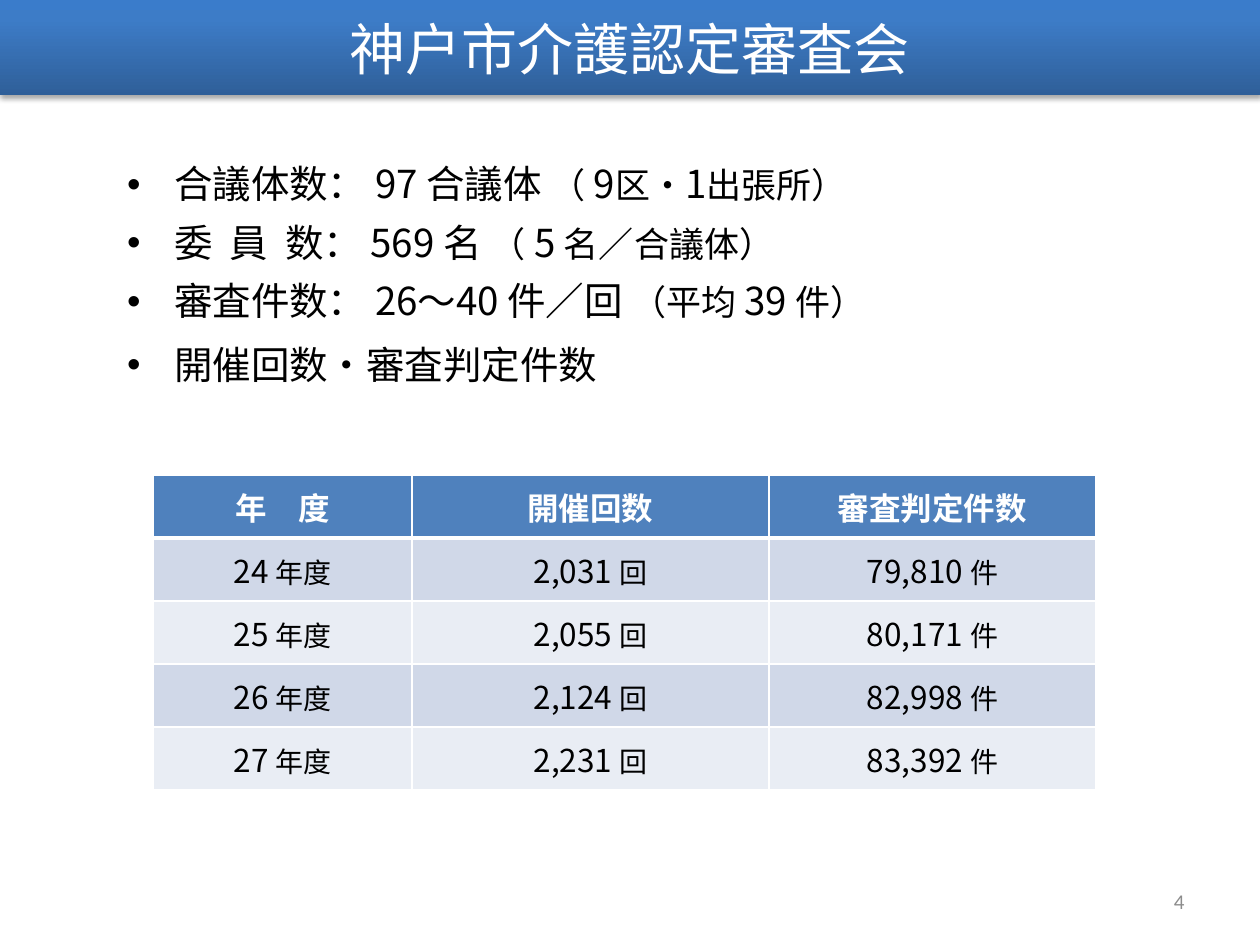
from dataclasses import dataclass

from pptx import Presentation
from pptx.dml.color import RGBColor
from pptx.enum.shapes import MSO_SHAPE
from pptx.enum.text import MSO_ANCHOR, PP_ALIGN
from pptx.oxml import parse_xml
from pptx.oxml.ns import nsdecls, qn
from pptx.util import Pt


@dataclass(frozen=True)
class Theme:
    black: str = "000000"
    white: str = "FFFFFF"
    grey: str = "8C8C8C"
    header: str = "4F81BD"
    bands: tuple = ("D0D8E8", "E9EDF4")
    banner_stops: tuple = ((0, "2F5F99"), (80, "3D7CC7"), (100, "3A7CCB"))
    japanese: str = "Noto Sans CJK JP"
    latin: str = "Calibri"
    title: int = 32
    body: int = 22
    aside: int = 20
    cell: int = 18
    unit: int = 16
    number: int = 12


THEME = Theme()

# Each bullet is a list of (text, size, letter spacing in points)
BULLETS = [
    [("合議体数： 97 合議体 ", THEME.body, 0), ("（", THEME.aside, 0),
     (" 9", THEME.body, 0), ("区・", THEME.aside, 0),
     ("1", THEME.body, 0), ("出張所）", THEME.aside, 0)],
    [("委 員 ", THEME.body, 2.4), ("数： 569 名 ", THEME.body, 0),
     ("（", THEME.aside, 0), (" 5 ", THEME.body, 0),
     ("名／合議体）", THEME.aside, 0)],
    [("審査件数： 26～40 件／回 ", THEME.body, 0), ("（平均 ", THEME.aside, 0),
     ("39 ", THEME.body, 0), ("件）", THEME.aside, 0)],
    [("開催回数・審査判定件数", THEME.body, 0)],
]

HEADINGS = ["年　度", "開催回数", "審査判定件数"]
UNITS = ["年度", "回", "件"]
RECORDS = [
    ("24", "2,031", "79,810"),
    ("25", "2,055", "80,171"),
    ("26", "2,124", "82,998"),
    ("27", "2,231", "83,392"),
]


def style_span(span, size, color, latin=THEME.japanese, bold=False):
    font = span.font
    font.size = Pt(size)
    font.bold = bold
    font.name = latin
    font.color.rgb = RGBColor.from_string(color)
    font._element.find(qn("a:latin")).addnext(
        parse_xml(f'<a:ea {nsdecls("a")} typeface="{THEME.japanese}"/>'))


def add_span(para, text, size, color):
    span = para.add_run()
    span.text = text
    style_span(span, size, color)
    return span


def set_line(frame, text, align, **style):
    frame.text = text
    frame.word_wrap = True
    frame.vertical_anchor = MSO_ANCHOR.MIDDLE
    para = frame.paragraphs[0]
    para.alignment = align
    style_span(para.runs[0], **style)


def add_banner(page):
    banner = page.shapes.add_shape(MSO_SHAPE.RECTANGLE, 0, 0, Pt(720), Pt(54.5))
    banner.line.fill.background()
    # Three-stop gradient running upwards, and a soft shadow below
    stops = "".join(
        f'<a:gs pos="{place * 1000}"><a:srgbClr val="{color}"/></a:gs>'
        for place, color in THEME.banner_stops)
    properties = banner._element.spPr
    properties.find(qn("a:prstGeom")).addnext(parse_xml(
        f'<a:gradFill {nsdecls("a")} rotWithShape="1"><a:gsLst>{stops}</a:gsLst>'
        '<a:lin ang="16200000" scaled="0"/></a:gradFill>'))
    properties.append(parse_xml(
        f'<a:effectLst {nsdecls("a")}><a:outerShdw blurRad="{Pt(3.1)}" '
        f'dist="{Pt(1.8)}" dir="5400000" rotWithShape="0">'
        f'<a:srgbClr val="{THEME.black}"><a:alpha val="35000"/></a:srgbClr>'
        '</a:outerShdw></a:effectLst>'))
    set_line(banner.text_frame, "神戸市介護認定審査会", PP_ALIGN.CENTER,
             size=THEME.title, color=THEME.white, latin=THEME.latin)


def add_bullets(page):
    box = page.shapes.add_textbox(Pt(65.5), Pt(94.3), Pt(625), Pt(203.8))
    frame = box.text_frame
    frame.word_wrap = True
    frame.margin_top = Pt(0.4)
    for index, spans in enumerate(BULLETS):
        para = frame.add_paragraph() if index else frame.paragraphs[0]
        para.line_spacing = 1.0 if index == len(BULLETS) - 1 else 0.9
        para.space_before = Pt(9.6 if index else 0)
        properties = para._p.get_or_add_pPr()
        properties.set("marL", str(Pt(27)))
        properties.set("indent", str(Pt(-27)))
        for tag in ('buFont typeface="Arial"', 'buChar char="•"'):
            properties.append(parse_xml(f'<a:{tag} {nsdecls("a")}/>'))
        for text, size, spacing in spans:
            span = add_span(para, text, size, THEME.black)
            if spacing:
                span.font._element.set("spc", str(round(spacing * 100)))


def set_borders(cell, bottom=1, top=1):
    properties = cell._tc.get_or_add_tcPr()
    for side, width in (("L", 1), ("R", 1), ("T", top), ("B", bottom)):
        properties.append(parse_xml(
            f'<a:ln{side} {nsdecls("a")} w="{Pt(width)}"><a:solidFill>'
            f'<a:srgbClr val="{THEME.white}"/></a:solidFill></a:ln{side}>'))


def set_fill(cell, color):
    cell.fill.solid()
    cell.fill.fore_color.rgb = RGBColor.from_string(color)


def add_results_table(page):
    row_count = len(RECORDS) + 1
    table = page.shapes.add_table(row_count, len(HEADINGS), Pt(87.8), Pt(271.5),
                                  Pt(538.6), Pt(180)).table
    for column, width in zip(table.columns, (147.6, 204, 187)):
        column.width = Pt(width)
    for row in table.rows:
        row.height = Pt(36)

    # Header row
    for column, heading in enumerate(HEADINGS):
        cell = table.cell(0, column)
        set_borders(cell, bottom=3)
        set_fill(cell, THEME.header)
        set_line(cell.text_frame, heading, PP_ALIGN.CENTER,
                 size=THEME.cell, color=THEME.white, bold=True)
        cell.vertical_anchor = MSO_ANCHOR.MIDDLE

    # One row per fiscal year, with the unit in smaller type
    for row, record in enumerate(RECORDS, start=1):
        for column, (value, unit) in enumerate(zip(record, UNITS)):
            cell = table.cell(row, column)
            set_borders(cell, top=3 if row == 1 else 1)
            set_fill(cell, THEME.bands[(row - 1) % 2])
            set_line(cell.text_frame, f"{value} ", PP_ALIGN.CENTER,
                     size=THEME.cell, color=THEME.black)
            add_span(cell.text_frame.paragraphs[0], unit, THEME.unit, THEME.black)
            cell.vertical_anchor = MSO_ANCHOR.MIDDLE


def add_page_number(page):
    box = page.shapes.add_textbox(Pt(516), Pt(500.5), Pt(168), Pt(28.8))
    set_line(box.text_frame, "4", PP_ALIGN.RIGHT,
             size=THEME.number, color=THEME.grey, latin=THEME.latin)


def main():
    deck = Presentation()
    deck.slide_width, deck.slide_height = Pt(720), Pt(540)
    page = deck.slides.add_slide(deck.slide_layouts[6])
    add_bullets(page)
    add_page_number(page)
    add_banner(page)
    add_results_table(page)
    deck.save("out.pptx")


if __name__ == "__main__":
    main()
